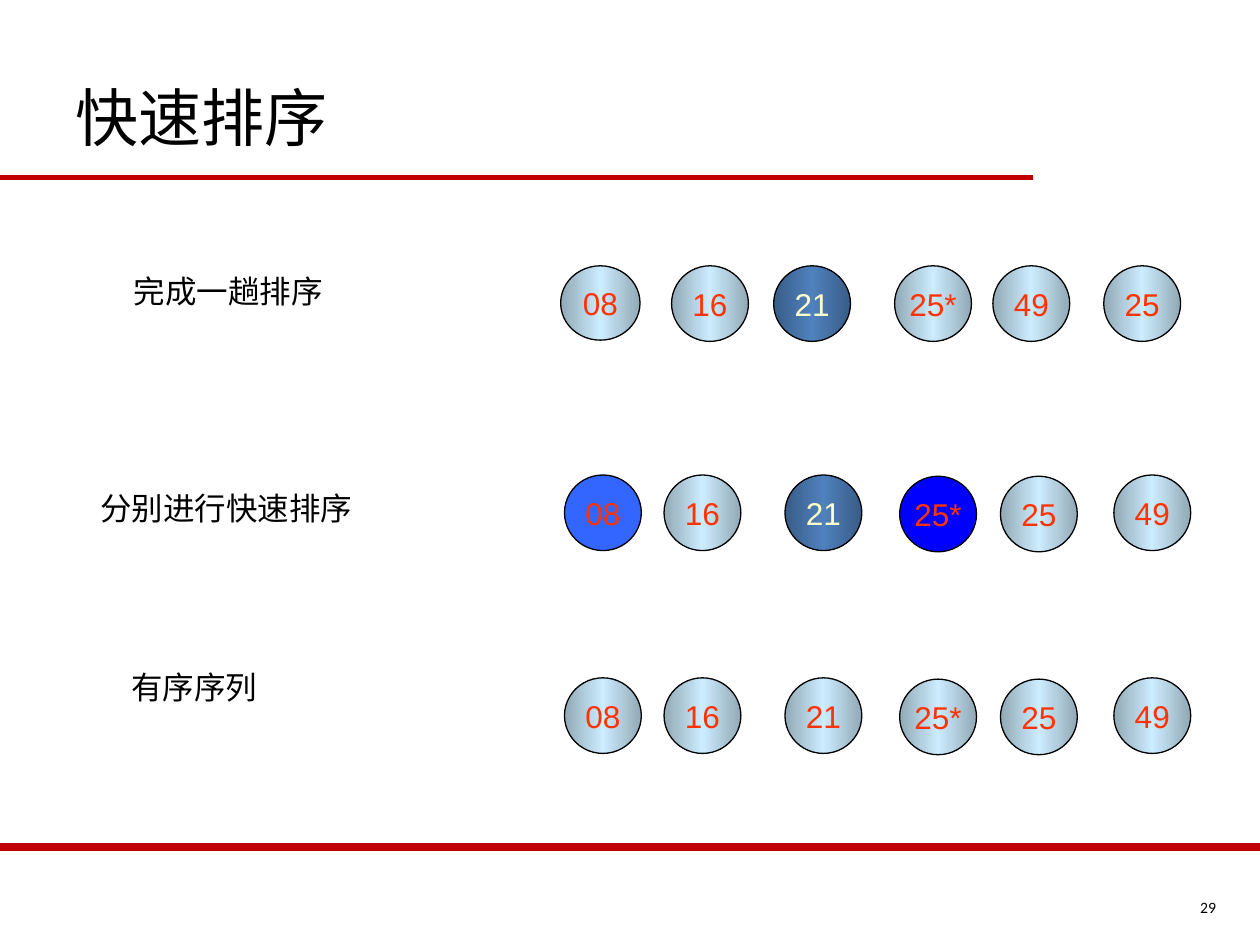
from copy import deepcopy
from typing import NamedTuple

from lxml.etree import SubElement
from pptx import Presentation
from pptx.dml.color import RGBColor
from pptx.enum.shapes import MSO_CONNECTOR, MSO_SHAPE
from pptx.enum.text import MSO_ANCHOR, PP_ALIGN
from pptx.oxml.ns import qn
from pptx.util import Pt

BLACK = RGBColor(0x00, 0x00, 0x00)
CRIMSON = RGBColor(0xC0, 0x00, 0x00)
ORANGE = RGBColor(0xFF, 0x33, 0x00)
CREAM = RGBColor(0xFF, 0xFF, 0xCC)
AZURE = RGBColor(0x33, 0x66, 0xFF)
BLUE = RGBColor(0x00, 0x00, 0xFF)
MIST = (RGBColor(0x92, 0xA9, 0xB6), RGBColor(0xCC, 0xEC, 0xFF))
STEEL = (RGBColor(0x39, 0x5C, 0x87), RGBColor(0x4F, 0x81, 0xBD))

HAN = "Noto Sans CJK SC"
WIDE, HIGH = 720, 540
BALL_W, BALL_H = 43.92, 43.2


class Look(NamedTuple):
    fill: tuple[RGBColor, ...]
    ink: RGBColor = ORANGE


class Spot(NamedTuple):
    left: float
    drop: float = 0
    width: float = BALL_W
    height: float = BALL_H


class Label(NamedTuple):
    text: str
    left: float
    top: float
    width: float


class Row(NamedTuple):
    label: Label
    top: float
    spots: tuple[Spot, ...]
    keys: tuple[str, ...]
    looks: dict[str, Look]


PLAIN = Look(MIST)
PIVOT = Look(STEEL, CREAM)

FIRST = (Spot(320.4, 0, 45.36, 42.5), Spot(383.76), Spot(442.08),
         Spot(511.2), Spot(567.36), Spot(630.72))
LATER = (Spot(322.56), Spot(379.44), Spot(448.56),
         Spot(514.08, 0.72), Spot(571.68, 0.72), Spot(636.48))
SORTED = ("08", "16", "21", "25*", "25", "49")

ROWS = (
    Row(Label("完成一趟排序", 28.8, 151.92, 203.04), 151.92, FIRST,
        ("08", "16", "21", "25*", "49", "25"), {"21": PIVOT}),
    Row(Label("分别进行快速排序", 22.32, 275.76, 213.84), 271.44, LATER, SORTED,
        {"08": Look((AZURE,)), "21": PIVOT, "25*": Look((BLUE,))}),
    Row(Label("有序序列", 36, 378, 149.76), 387.36, LATER, SORTED, {}),
)


def write(shape, text: str, *, size: float = 18, font: str = HAN,
          ink: RGBColor = BLACK, align=PP_ALIGN.CENTER,
          anchor=MSO_ANCHOR.TOP, wrap: bool = True) -> None:
    frame = shape.text_frame
    frame.word_wrap = wrap
    frame.vertical_anchor = anchor
    para = frame.paragraphs[0]
    para.alignment = align
    run = para.add_run()
    run.text = text
    run.font.size = Pt(size)
    run.font.name = font
    run.font.color.rgb = ink
    SubElement(run.font._element, qn("a:ea")).set("typeface", font)


def add_box(slide, left: float, top: float, width: float, height: float):
    return slide.shapes.add_textbox(Pt(left), Pt(top), Pt(width), Pt(height))


def add_rule(slide, end: float, top: float, weight: float) -> None:
    """Draw a level line from the left edge of the slide."""
    rule = slide.shapes.add_connector(
        MSO_CONNECTOR.STRAIGHT, Pt(0), Pt(top), Pt(end), Pt(top))
    rule.line.color.rgb = CRIMSON
    rule.line.width = Pt(weight)
    SubElement(rule._element.spPr, qn("a:effectLst"))


def paint(shape, tones: tuple[RGBColor, ...]) -> None:
    """Fill with one tone, or shade from the first to the second and back."""
    fill = shape.fill
    if len(tones) == 1:
        fill.solid()
        fill.fore_color.rgb = tones[0]
        return
    fill.gradient()
    fill.gradient_angle = 0
    stops = shape._element.spPr.find(".//" + qn("a:gsLst"))
    stops.append(deepcopy(stops[0]))
    edge, core = tones
    for step, (stop, tone) in enumerate(zip(fill.gradient_stops, (edge, core, edge))):
        stop.position = step / 2
        stop.color.rgb = tone


def add_ball(slide, spot: Spot, top: float, key: str, look: Look) -> None:
    ball = slide.shapes.add_shape(
        MSO_SHAPE.OVAL, Pt(spot.left), Pt(top + spot.drop),
        Pt(spot.width), Pt(spot.height))
    ball.shadow.inherit = False
    paint(ball, look.fill)
    ball.line.color.rgb = BLACK
    ball.line.width = Pt(0.75)
    write(ball, key, font="Arial", ink=look.ink,
          anchor=MSO_ANCHOR.MIDDLE, wrap=False)


def add_row(slide, row: Row) -> None:
    label = row.label
    write(add_box(slide, label.left, label.top, label.width, 28.8), label.text)
    for spot, key in zip(row.spots, row.keys):
        add_ball(slide, spot, row.top, key, row.looks.get(key, PLAIN))


def main() -> None:
    deck = Presentation()
    deck.slide_width, deck.slide_height = Pt(WIDE), Pt(HIGH)
    slide = deck.slides.add_slide(deck.slide_layouts[6])
    add_rule(slide, 590.4, 101.52, 3)
    add_rule(slide, WIDE, 483.84, 4.5)
    write(add_box(slide, 36, 21.6, 648, 90), "快速排序", size=36,
          align=PP_ALIGN.LEFT, anchor=MSO_ANCHOR.MIDDLE)
    write(add_box(slide, 660.24, 509.76, 41.76, 23.76), "29", size=9,
          font="Calibri", align=PP_ALIGN.RIGHT)
    for row in ROWS:
        add_row(slide, row)
    deck.save("out.pptx")


if __name__ == "__main__":
    main()
